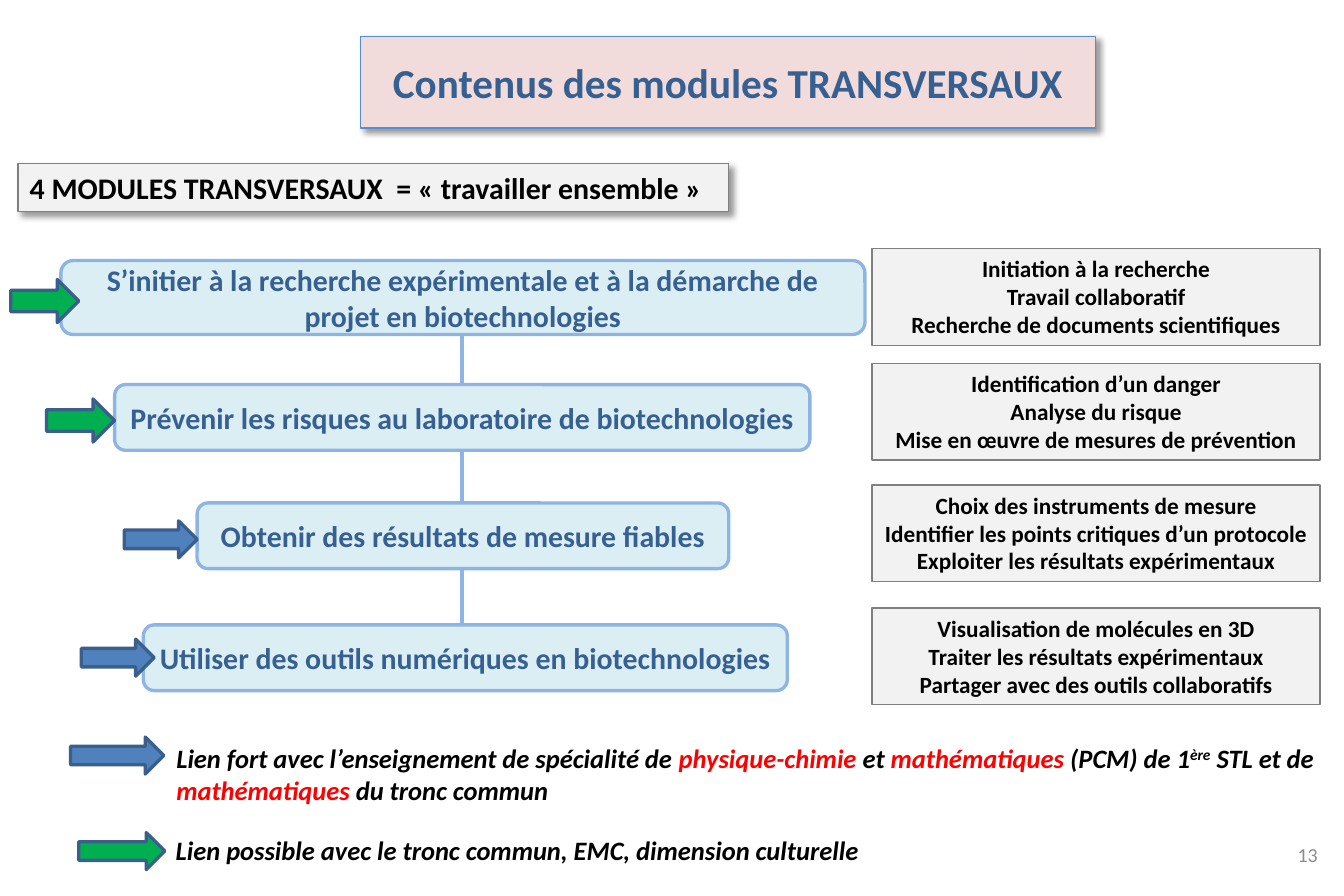
from lxml import etree
from pptx import Presentation
from pptx.dml.color import RGBColor
from pptx.enum.shapes import MSO_CONNECTOR, MSO_SHAPE
from pptx.enum.text import MSO_ANCHOR, PP_ALIGN
from pptx.oxml.ns import qn
from pptx.util import Pt

RECTANGLE = MSO_SHAPE.RECTANGLE
ROUNDED = MSO_SHAPE.ROUNDED_RECTANGLE
ARROW = MSO_SHAPE.RIGHT_ARROW
STRAIGHT = MSO_CONNECTOR.STRAIGHT
TOP, MIDDLE = MSO_ANCHOR.TOP, MSO_ANCHOR.MIDDLE
LEFT, CENTER, RIGHT = PP_ALIGN.LEFT, PP_ALIGN.CENTER, PP_ALIGN.RIGHT

BLACK = RGBColor(0x00, 0x00, 0x00)
RED = RGBColor(0xFF, 0x00, 0x00)
NAVY = RGBColor(0x37, 0x60, 0x92)
PALE_BLUE = RGBColor(0xDB, 0xEE, 0xF4)
SKY = RGBColor(0x8E, 0xB4, 0xE3)
PINK = RGBColor(0xF2, 0xDC, 0xDB)
TITLE_EDGE = RGBColor(0x55, 0x8E, 0xD5)
LIGHT_GRAY = RGBColor(0xF2, 0xF2, 0xF2)
GRAY = RGBColor(0x80, 0x80, 0x80)
NUMBER_GRAY = RGBColor(0x8C, 0x8C, 0x8C)
BLUE = RGBColor(0x4F, 0x81, 0xBD)
GREEN = RGBColor(0x00, 0xB0, 0x50)
ARROW_EDGE = RGBColor(0x3A, 0x5F, 0x8C)

MODULES = [
    ("S’initier à la recherche expérimentale et à la démarche de projet en biotechnologies",
     (36.7, 157, 484.6, 44.6)),
    ("Prévenir les risques au laboratoire de biotechnologies", (69.1, 231.8, 419, 39.6)),
    ("Obtenir des résultats de mesure fiables", (118.8, 303.1, 320.4, 39.6)),
    ("Utiliser des outils numériques en biotechnologies", (86.4, 376.6, 388.1, 39.6)),
]
CARDS = [
    (149.8, ["Initiation à la recherche", "Travail collaboratif",
             "Recherche de documents scientifiques"]),
    (218.9, ["Identification d’un danger", "Analyse du risque",
             "Mise en œuvre de mesures de prévention"]),
    (292.3, ["Choix des instruments de mesure",
             "Identifier les points critiques d’un protocole",
             "Exploiter les résultats expérimentaux"]),
    (366.5, ["Visualisation de molécules en 3D", "Traiter les résultats expérimentaux",
             "Partager avec des outils collaboratifs"]),
]
ARROWS = [
    (GREEN, (6.5, 168.5, 41, 25.9)),
    (GREEN, (28.1, 240.5, 41, 25.9)),
    (BLUE, (74.9, 313.9, 43.9, 22.3)),
    (BLUE, (49, 385.2, 43.9, 22.3)),
    (BLUE, (42.5, 444.2, 56.2, 22.3)),
    (GREEN, (47.5, 501.8, 51.8, 22.3)),
]
STRONG_LINK = [
    ("Lien fort avec l’enseignement de spécialité de ", {}),
    ("physique-chimie", {"color": RED}),
    (" et ", {}),
    ("mathématiques", {"color": RED}),
    (" (PCM) de 1", {}),
    ("ère", {"raised": True}),
    (" STL et de ", {}),
    ("mathématiques", {"color": RED}),
    (" du tronc commun", {}),
]
POSSIBLE_LINK = [("Lien possible avec le tronc commun, EMC, dimension culturelle", {})]
CHAIN_X = 278.6


def points(box):
    return [Pt(length) for length in box]


def add_run(paragraph, text, size, color=BLACK, bold=True, italic=False, raised=False):
    run = paragraph.add_run()
    run.text = text
    font = run.font
    font.name, font.size = "Calibri", Pt(size)
    font.bold, font.italic = bold, italic
    font.color.rgb = color
    if raised:
        font._element.set("baseline", "30000")


def write_text(shape, lines, align=LEFT, anchor=TOP, **style):
    frame = shape.text_frame
    frame.word_wrap = True
    frame.vertical_anchor = anchor
    for index, line in enumerate(lines):
        paragraph = frame.add_paragraph() if index else frame.paragraphs[0]
        paragraph.alignment = align
        runs = [(line, {})] if isinstance(line, str) else line
        for text, changes in runs:
            add_run(paragraph, text, **{**style, **changes})


def add_shape(slide, kind, box, fill, edge, edge_width):
    shape = slide.shapes.add_shape(kind, *points(box))
    shape.shadow.inherit = False
    shape.fill.solid()
    shape.fill.fore_color.rgb = fill
    shape.line.color.rgb = edge
    shape.line.width = Pt(edge_width)
    return shape


def add_shadow(shape, degrees):
    effects = shape._element.spPr.find(qn("a:effectLst"))
    shadow = etree.SubElement(effects, qn("a:outerShdw"), blurRad=str(Pt(4)),
                              dist=str(Pt(3)), dir=str(degrees * 60000),
                              algn="tl", rotWithShape="0")
    color = etree.SubElement(shadow, qn("a:srgbClr"), val=str(BLACK))
    etree.SubElement(color, qn("a:alpha"), val="40000")


def add_link(slide, start_y, end_y):
    link = slide.shapes.add_connector(STRAIGHT, *points((CHAIN_X, start_y, CHAIN_X, end_y)))
    link.line.color.rgb = SKY
    link.line.width = Pt(2.5)
    etree.SubElement(link._element.spPr, qn("a:effectLst"))


def add_label(slide, box, lines, **style):
    write_text(slide.shapes.add_textbox(*points(box)), lines, **style)


def main():
    deck = Presentation()
    deck.slide_width, deck.slide_height = Pt(810), Pt(540)
    slide = deck.slides.add_slide(deck.slide_layouts[6])

    for name, box in MODULES:
        module = add_shape(slide, ROUNDED, box, PALE_BLUE, SKY, 2)
        write_text(module, [name], align=CENTER, anchor=MIDDLE, size=18, color=NAVY)
    for (_, upper), (_, lower) in zip(MODULES, MODULES[1:]):
        add_link(slide, upper[1] + upper[3], lower[1])

    heading = add_shape(slide, RECTANGLE, (10.8, 98.6, 428.4, 29.1), LIGHT_GRAY, GRAY, 0.75)
    add_shadow(heading, 45)
    write_text(heading, ["4 MODULES TRANSVERSAUX  = « travailler ensemble »"], size=18)

    for top, skills in CARDS:
        card = add_shape(slide, RECTANGLE, (525.6, top, 270, 58.3), LIGHT_GRAY, GRAY, 0.75)
        write_text(card, skills, align=CENTER, size=14)

    for color, box in ARROWS:
        add_shape(slide, ARROW, box, color, ARROW_EDGE, 2)
    add_label(slide, (99.2, 443.5, 710.6, 46), [STRONG_LINK], size=16, italic=True)
    add_label(slide, (98.8, 499, 648.7, 26.7), [POSSIBLE_LINK], size=16, italic=True)
    add_label(slide, (612.7, 500.4, 188.6, 28.8), ["13"], align=RIGHT, anchor=MIDDLE,
              size=12, color=NUMBER_GRAY, bold=False)

    title = add_shape(slide, RECTANGLE, (217.4, 21.8, 442.8, 55.4), PINK, TITLE_EDGE, 0.75)
    add_shadow(title, 45)
    write_text(title, ["Contenus des modules TRANSVERSAUX"], align=CENTER, anchor=MIDDLE,
               size=24.8, color=NAVY)

    deck.save("out.pptx")


if __name__ == "__main__":
    main()
